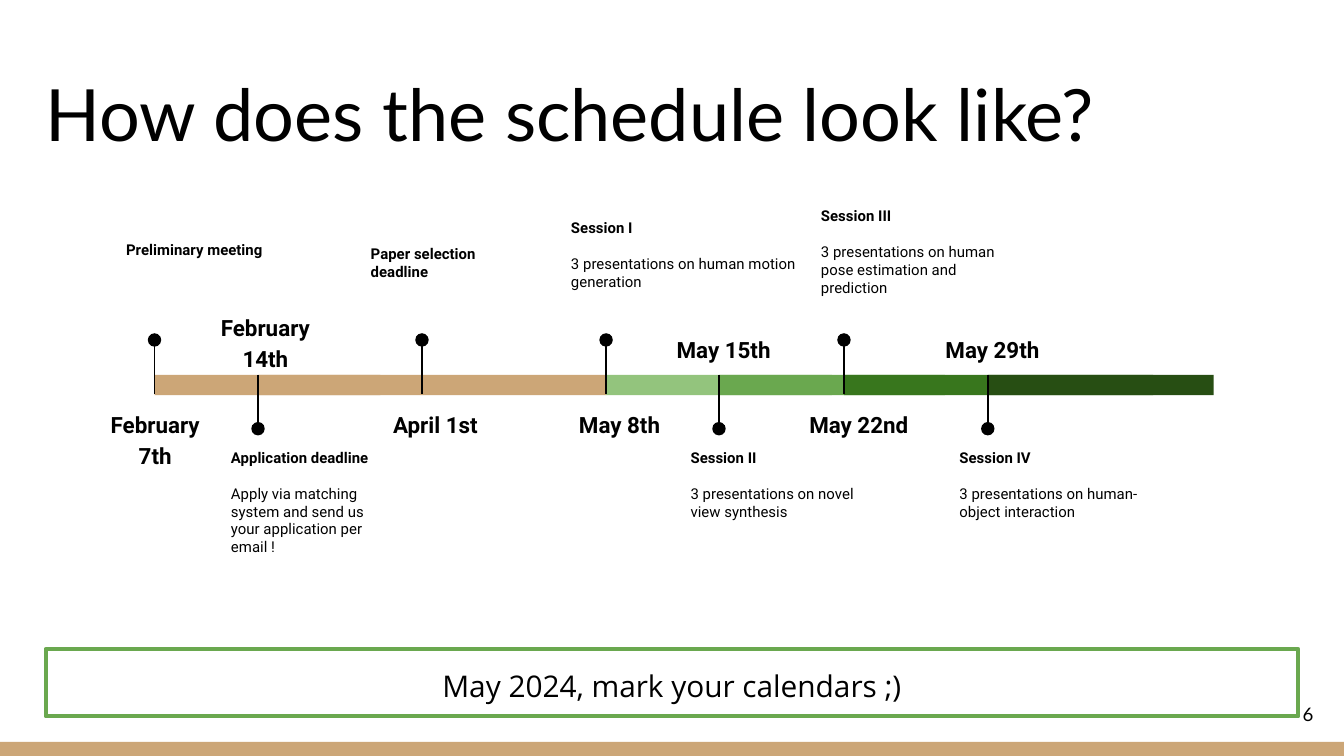
from dataclasses import dataclass

from lxml.etree import SubElement
from pptx import Presentation
from pptx.dml.color import RGBColor
from pptx.enum.shapes import MSO_CONNECTOR as Connector, MSO_SHAPE as Shape
from pptx.enum.text import MSO_ANCHOR as Anchor, PP_ALIGN as Align
from pptx.oxml.ns import qn
from pptx.util import Inches, Pt

COLORS = {
    "black": "000000",
    "sand": "CCA677",
    "light": "93C47D",
    "green": "6AA84F",
    "forest": "38761D",
    "deep": "274E13",
}
BAR_TOP, BAR_HEIGHT, DOT = 2.79, 0.15, 0.1
STEM_BOTTOM = 2.93


@dataclass
class Milestone:
    """A date on the timeline; boxes are left, top, width, height."""
    x: float
    above: bool
    bar_width: float
    color: str
    date: str
    date_box: tuple
    lines: list
    note_box: tuple
    has_body: bool = True


MILESTONES = [
    Milestone(1.15, True, 1.68, "sand", "February 7th", (0.68, 2.93, 0.95, 0.41),
              ["Preliminary meeting"], (0.84, 1.72, 1.27, 0.39), False),
    Milestone(1.92, False, 2.59, "sand", "February 14th", (1.45, 2.21, 1.05, 0.41),
              ["Application deadline",
               "Apply via matching system and send us your application per email !"],
              (1.62, 3.24, 1.39, 1.13)),
    Milestone(3.14, True, 0, "sand", "April 1st", (2.78, 2.93, 0.92, 0.41),
              ["Paper selection", "deadline"], (2.66, 1.72, 1.95, 0.58), False),
    Milestone(4.51, True, 1.68, "light", "May 8th", (4.15, 2.93, 0.92, 0.41),
              ["Session I", "3 presentations on human motion generation"],
              (4.15, 1.53, 1.95, 0.69)),
    Milestone(5.35, False, 1.68, "green", "May 15th", (4.86, 2.37, 1.05, 0.41),
              ["Session II", "3 presentations on novel view synthesis"],
              (5.04, 3.24, 1.54, 1.03)),
    Milestone(6.28, True, 2.3, "forest", "May 22nd", (5.88, 2.93, 1.02, 0.41),
              ["Session III", "3 presentations on human pose estimation and prediction"],
              (6.01, 1.44, 1.61, 1.03)),
    Milestone(7.35, False, 1.68, "deep", "May 29th", (6.86, 2.37, 1.05, 0.41),
              ["Session IV", "3 presentations on human-object interaction"],
              (7.04, 3.24, 1.68, 1.03)),
]


def rgb(name):
    """Look up a named colour."""
    return RGBColor.from_string(COLORS[name])


def place(box):
    """Turn a box in inches into lengths."""
    return [Inches(value) for value in box]


def write(frame, text, *, size, font, bold=False, align=Align.LEFT, spacing=1.0,
          after=0, anchor=Anchor.TOP, inset=0.1):
    """Add a formatted paragraph to a text frame."""
    frame.word_wrap = True
    frame.vertical_anchor = anchor
    frame.margin_left = frame.margin_right = Inches(inset)
    frame.margin_top = frame.margin_bottom = Inches(0.1)
    para = frame.paragraphs[0]
    if para.runs:
        para = frame.add_paragraph()
    para.alignment = align
    para.line_spacing = spacing
    para.space_after = Pt(after)
    span = para.add_run()
    span.text = text
    span.font.size = Pt(size)
    span.font.name = font
    span.font.bold = bold
    span.font.color.rgb = rgb("black")


def add_text(page, box, text, **style):
    """Add a text box holding one paragraph."""
    frame = page.shapes.add_textbox(*place(box)).text_frame
    write(frame, text, **style)
    return frame


def add_block(page, kind, box, fill=None, line=None):
    """Add a preset shape with an optional fill and outline."""
    block = page.shapes.add_shape(kind, *place(box))
    block.shadow.inherit = False
    if fill:
        block.fill.solid()
        block.fill.fore_color.rgb = rgb(fill)
    else:
        block.fill.background()
    if line:
        block.line.color.rgb = rgb(line)
        block.line.width = Pt(2.25)
    else:
        block.line.fill.background()
    return block


def add_pin(page, x, above):
    """Add a stem across the bar with a dot at its free end."""
    start, end = (2.54, STEM_BOTTOM) if above else (3.18, BAR_TOP)
    stem = page.shapes.add_connector(Connector.STRAIGHT, *place((x, start, x, end)))
    stem.line.color.rgb = rgb("black")
    stem.line.width = Pt(0.75)
    SubElement(stem._element.spPr, qn("a:effectLst"))
    dot_top = 2.48 if above else 3.14
    add_block(page, Shape.OVAL, (x - DOT / 2, dot_top, DOT, DOT), "black")


def add_milestone(page, stone):
    """Add the bar, pin, date and note of one milestone."""
    if stone.bar_width:
        bar = (stone.x, BAR_TOP, stone.bar_width, BAR_HEIGHT)
        add_block(page, Shape.RECTANGLE, bar, stone.color)
    add_pin(page, stone.x, stone.above)
    add_text(page, stone.date_box, stone.date, size=12, font="Roboto", bold=True,
             align=Align.CENTER, spacing=1.15, after=16)
    heading, *rest = stone.lines
    gap = 9.4 if stone.has_body else 0 if rest else 16
    frame = add_text(page, stone.note_box, heading, size=8, font="Roboto",
                     bold=True, after=gap)
    for line in rest:
        write(frame, line, size=8, font="Roboto", bold=not stone.has_body,
              after=16 if stone.has_body else 0)


def main():
    """Build the schedule slide and save it."""
    deck = Presentation()
    deck.slide_width = Inches(10)
    deck.slide_height = deck.slide_width * 9 // 16
    page = deck.slides.add_slide(deck.slide_layouts[6])
    add_block(page, Shape.RECTANGLE, (0, 5.52, 10, 0.11), "sand")
    add_text(page, (0.34, 0.35, 9.32, 0.91), "How does the schedule look like?",
             size=38.6, font="Lato", anchor=Anchor.BOTTOM, inset=0)
    banner = add_block(page, Shape.RECTANGLE, (0.34, 4.83, 9.32, 0.5), line="green")
    write(banner.text_frame, "May 2024, mark your calendars ;)", size=16,
          font="Open Sans", align=Align.CENTER, spacing=1.15, after=12, inset=0)
    add_text(page, (9.27, 5.1, 0.6, 0.43), "6", size=10, font="Lato",
             align=Align.RIGHT, anchor=Anchor.MIDDLE)
    for stone in MILESTONES:
        add_milestone(page, stone)
    deck.save("out.pptx")


if __name__ == "__main__":
    main()
